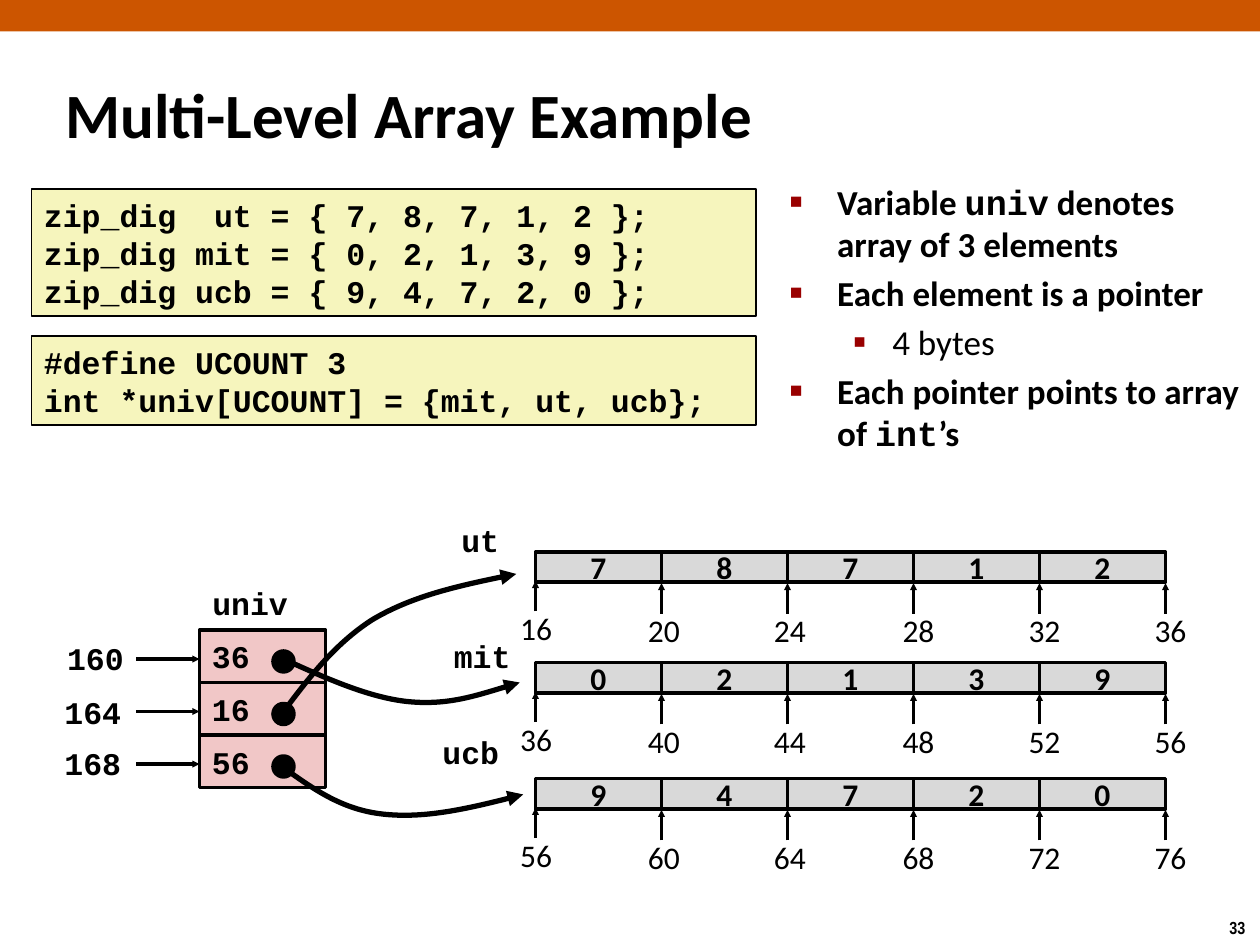
import lxml.etree
import pptx
import pptx.dml.color
import pptx.enum.shapes
import pptx.enum.text
import pptx.oxml.ns
import pptx.util

Pt = pptx.util.Pt
qn = pptx.oxml.ns.qn
ALIGN = pptx.enum.text.PP_ALIGN
ANCHOR = pptx.enum.text.MSO_ANCHOR
SHAPE = pptx.enum.shapes.MSO_SHAPE

COLORS = {
    "ink": "000000",
    "banner": "CC5500",
    "bullet": "990000",
    "code": "F6F5BD",
    "pointer": "F1C7C7",
    "digit": "D9D9D9",
}
BODY_FONT, CODE_FONT = "Calibri", "Courier New"

ARRAYS = [  # name, name left, name top, row top, first address, digits
    ("ut", 256.3, 293.8, 315.4, 16, (7, 8, 7, 1, 2)),
    ("mit", 252, 360, 378.7, 36, (0, 2, 1, 3, 9)),
    ("ucb", 245.5, 415.4, 445, 56, (9, 4, 7, 2, 0)),
]
POINTERS = [  # address, address left, address top, target
    (160, 31, 361.4, 36),
    (164, 29.5, 392.4, 16),
    (168, 29.5, 421.2, 56),
]
CURVES = [  # start, then two cubic segments of three points each
    [(161.3, 408.2), (176.4, 388), (190.8, 368), (213.1, 354.2),
     (235.4, 340.6), (265, 334), (295.2, 327.6)],
    [(162.7, 377.3), (187.2, 388), (211.7, 398.9), (234, 401),
     (256.3, 403.2), (277.2, 396), (297.4, 389.5)],
    [(161.3, 437.8), (177.8, 450), (193.7, 462.2), (216.7, 465.1),
     (239.8, 468), (269.3, 461.5), (298.8, 454.3)],
]
FACTS = [  # level, (text, font) runs
    (0, [("Variable ", None), ("univ", CODE_FONT), (" denotes array of 3 elements", None)]),
    (0, [("Each element is a pointer", None)]),
    (1, [("4 bytes", None)]),
    (0, [("Each pointer points to array of ", None), ("int", CODE_FONT), ("’s", None)]),
]
BULLETS = [("■", 60, 27, 27), ("▪", 110, 58.5, 22.5)]  # char, size %, margin, hang


def rgb(name):
    return pptx.dml.color.RGBColor.from_string(COLORS[name])


def style_font(paragraph, size, name=BODY_FONT, bold=True):
    font = paragraph.font
    font.size, font.name, font.bold = Pt(size), name, bold
    font.color.rgb = rgb("ink")


def place(shape, left, top, width, height):
    shape.left, shape.top, shape.width, shape.height = map(Pt, (left, top, width, height))


def write(shape, text, size=18, font=BODY_FONT, bold=True, align=ALIGN.LEFT):
    frame = shape.text_frame
    frame.text = text
    for paragraph in frame.paragraphs:
        paragraph.alignment = align
        if font == CODE_FONT:
            paragraph.line_spacing = Pt(21.8)
        style_font(paragraph, size, font, bold)


def add_label(shapes, box, text, wrap=False, **style):
    label = shapes.add_textbox(*map(Pt, box))
    label.text_frame.word_wrap = wrap
    write(label, text, **style)


def add_block(shapes, box, fill, line=None, kind=SHAPE.RECTANGLE):
    block = shapes.add_shape(kind, *map(Pt, box))
    block.shadow.inherit = False
    block.fill.solid()
    block.fill.fore_color.rgb = rgb(fill)
    if line:
        block.line.color.rgb = rgb("ink")
        block.line.width = Pt(line)
    else:
        block.line.fill.background()
    return block


def add_cell(shapes, box, fill, text, **style):
    cell = add_block(shapes, box, fill, 2)
    cell.text_frame.vertical_anchor = ANCHOR.MIDDLE
    cell.text_frame.margin_top = cell.text_frame.margin_bottom = 0
    write(cell, text, **style)


def add_code(shapes, top, height, lines):
    code = add_block(shapes, (18, top, 414, height), "code", 1)
    code.text_frame.vertical_anchor = ANCHOR.TOP
    write(code, "\n".join(lines), font=CODE_FONT)


def finish_arrow(arrow, width, head):
    arrow.line.color.rgb = rgb("ink")
    arrow.line.width = Pt(width)
    lxml.etree.SubElement(arrow.line._get_or_add_ln(), qn("a:tailEnd"),
                          type="triangle", w=head, len=head)


def add_arrow(shapes, x1, y1, x2, y2):
    arrow = shapes.add_connector(pptx.enum.shapes.MSO_CONNECTOR.STRAIGHT,
                                 *map(Pt, (x1, y1, x2, y2)))
    finish_arrow(arrow, 2, "sm")
    lxml.etree.SubElement(arrow._element.spPr, qn("a:effectLst"))


def add_curve(shapes, points):
    """Draw a freeform through the points, each three after the first being one cubic."""
    builder = shapes.build_freeform(*points[0], scale=float(Pt(1)))
    builder.add_line_segments(points[1:], close=False)
    curve = builder.convert_to_shape()
    steps = list(curve._element.iter(qn("a:lnTo")))
    for first in range(0, len(steps), 3):
        cubic = lxml.etree.Element(qn("a:cubicBezTo"))
        steps[first].addprevious(cubic)
        for step in steps[first:first + 3]:
            cubic.append(step[0])
            step.getparent().remove(step)
    curve.shadow.inherit = False
    curve.fill.background()
    finish_arrow(curve, 3, "med")


def add_bullet(paragraph, char, percent, margin, hang):
    properties = paragraph._p.get_or_add_pPr()
    properties.set("marL", str(Pt(margin)))
    properties.set("indent", str(-Pt(hang)))
    color = lxml.etree.SubElement(properties, qn("a:buClr"))
    lxml.etree.SubElement(color, qn("a:srgbClr"), val=COLORS["bullet"])
    lxml.etree.SubElement(properties, qn("a:buSzPct"), val=str(percent * 1000))
    lxml.etree.SubElement(properties, qn("a:buFont"), typeface="Arial")
    lxml.etree.SubElement(properties, qn("a:buChar"), char=char)


def fill_facts(body):
    place(body, 444.2, 99.4, 275.8, 180)
    frame = body.text_frame
    frame.auto_size = pptx.enum.text.MSO_AUTO_SIZE.NONE
    for index, (level, runs) in enumerate(FACTS):
        paragraph = frame.add_paragraph() if index else frame.paragraphs[0]
        paragraph.level = level
        paragraph.space_before = Pt(4)
        add_bullet(paragraph, *BULLETS[level])
        style_font(paragraph, 20, bold=level == 0)
        for text, font in runs:
            run = paragraph.add_run()
            run.text = text
            if font:
                run.font.name = font


def add_pointers(shapes):
    for row, (address, left, label_top, target) in enumerate(POINTERS):
        top = 360 + 30 * row
        add_cell(shapes, (114, top, 72, 30), "pointer", str(target), font=CODE_FONT)
        add_block(shapes, (156, top + 12, 12, 12), "ink", 2, SHAPE.OVAL)
        add_arrow(shapes, 78, top + 16.6, 114, top + 16.6)
        add_label(shapes, (left, label_top, 46.8, 29), str(address),
                  font=CODE_FONT, align=ALIGN.RIGHT)
    add_label(shapes, (114, 329.8, 57.6, 29), "univ", font=CODE_FONT, align=ALIGN.RIGHT)


def add_array(shapes, top, first_address, digits):
    start, cell = 306, 72
    for index, digit in enumerate(digits):
        add_cell(shapes, (start + cell * index, top, cell, 17.3), "digit", str(digit),
                 align=ALIGN.CENTER)
    for index, shift in enumerate((0.4, 1.4, 1.4, 2.9, 2.9, 2.9)):
        edge = start + cell * index
        drop = 1.2 if index else 0
        add_arrow(shapes, edge, top + 34 + drop, edge, top + 16.6 + drop)
        add_label(shapes, (edge + shift - 39, top + 29.2 + drop, 78, 29),
                  str(first_address + 4 * index), wrap=True, bold=False, align=ALIGN.CENTER)


def main():
    deck = pptx.Presentation()
    deck.slide_width, deck.slide_height = Pt(720), Pt(540)
    slide = deck.slides.add_slide(deck.slide_layouts[1])
    shapes = slide.shapes

    add_block(shapes, (0, 0, 720, 18), "banner")
    add_label(shapes, (695.5, 520.6, 24.5, 19.4), "33", size=10, font="Arial Narrow")

    place(shapes.title, 30.2, 41.8, 560, 45.4)
    shapes.title.text_frame.vertical_anchor = ANCHOR.MIDDLE
    write(shapes.title, "Multi-Level Array Example", size=36)
    fill_facts(slide.placeholders[1])

    add_code(shapes, 108, 72.7, ["zip_dig  ut = { 7, 8, 7, 1, 2 };",
                                 "zip_dig mit = { 0, 2, 1, 3, 9 };",
                                 "zip_dig ucb = { 9, 4, 7, 2, 0 };"])
    add_code(shapes, 192, 51, ["#define UCOUNT 3", "int *univ[UCOUNT] = {mit, ut, ucb};"])

    add_pointers(shapes.add_group_shape().shapes)
    for name, left, name_top, row_top, address, digits in ARRAYS:
        add_label(shapes, (left, name_top, 14.4 + 10.8 * len(name), 29), name,
                  font=CODE_FONT, align=ALIGN.RIGHT)
        add_array(shapes.add_group_shape().shapes, row_top, address, digits)
    for points in CURVES:
        add_curve(shapes, points)

    deck.save("out.pptx")


if __name__ == "__main__":
    main()
